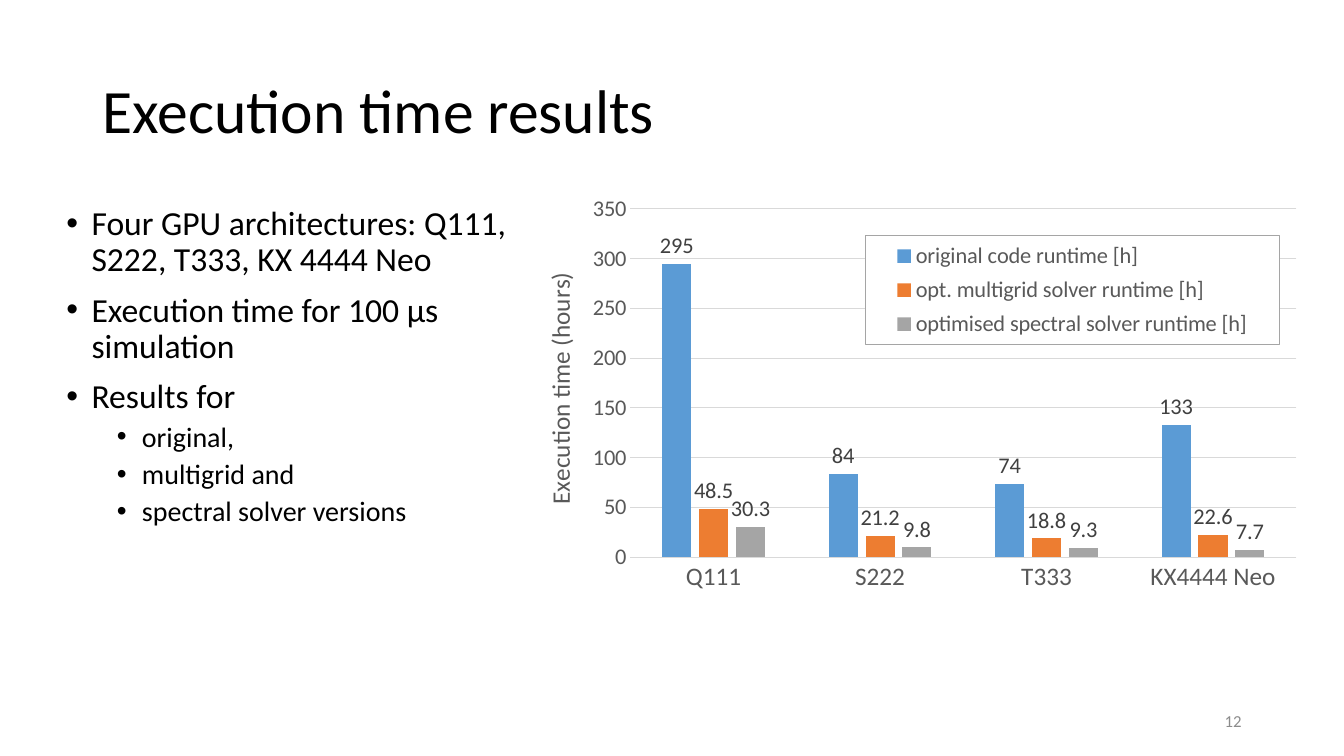
"""Build a slide that compares solver run times on four GPU types."""
from lxml import etree
from pptx import Presentation
from pptx.chart.data import CategoryChartData
from pptx.dml.color import RGBColor
from pptx.enum.chart import XL_CHART_TYPE, XL_LABEL_POSITION, XL_LEGEND_POSITION, XL_TICK_MARK
from pptx.enum.text import MSO_ANCHOR, PP_ALIGN
from pptx.oxml import parse_xml
from pptx.oxml.ns import nsdecls, qn
from pptx.util import Pt

COLUMN = XL_CHART_TYPE.COLUMN_CLUSTERED
ABOVE = XL_LABEL_POSITION.OUTSIDE_END
RIGHT_KEY = XL_LEGEND_POSITION.RIGHT
NO_TICK = XL_TICK_MARK.NONE
MIDDLE = MSO_ANCHOR.MIDDLE
LEFT, RIGHT = PP_ALIGN.LEFT, PP_ALIGN.RIGHT

TITLE = "Execution time results"
POINTS = [
    (0, "Four GPU architectures: Q111, S222, T333, KX 4444 Neo"),
    (0, "Execution time for 100 μs simulation"),
    (0, "Results for"),
    (1, "original,"),
    (1, "multigrid and"),
    (1, "spectral solver versions"),
]
NUMBER = "12"
CARDS = ["Q111", "S222", "T333", "KX4444 Neo"]
AXIS = "Execution time (hours)"
SERIES = [
    ("original code runtime [h]", [295, 84, 74, 133], "5B9BD5", "#,##0"),
    ("opt. multigrid solver runtime [h]", [48.5, 21.2, 18.8, 22.6], "ED7D31", "#,##0.0"),
    ("optimised spectral solver runtime [h]", [30.3, 9.8, 9.3, 7.7], "A5A5A5", "#,##0.0"),
]
THEME = {
    "font": "Calibri",
    "ink": "000000", "axis": "595959", "label": "404040", "grid": "D9D9D9",
    "edge": "A5A5A5", "page": "8C8C8C", "paper": "FFFFFF",
    "title": 44, "levels": [(24, 18, 10), (20, 54, 5)],
    "big": 18, "mid": 16, "small": 12,
}
BOXES = {
    "title": (66, 28.8, 828, 104.4),
    "points": (40.3, 144, 363.6, 342.7),
    "number": (678, 500.4, 216, 28.8),
    "chart": (373, 133.2, 572.4, 314.6),
}
PLOT = {"x": 0.135, "y": 0.051, "w": 0.831, "h": 0.791}
KEY = {"x": 0.428, "y": 0.112, "w": 0.517, "h": 0.247}
NAME = {"x": 0.02, "y": 0.185}


def box(key):
    return [Pt(v) for v in BOXES[key]]


def color(key):
    return RGBColor.from_string(THEME[key])


def style(font, size, ink):
    font.name = THEME["font"]
    font.size = Pt(size)
    font.bold = False
    font.color.rgb = color(ink)


def rule(line, ink):
    line.color.rgb = color(ink)
    line.width = Pt(0.75)


def place(node, spot, area, inner=False):
    for old in node.findall(qn("c:layout")):
        node.remove(old)
    layout = parse_xml(f"<c:layout {nsdecls('c')}><c:manualLayout/></c:layout>")
    marks = [("layoutTarget", "inner")] if inner else []
    marks += [(k + "Mode", "edge") for k in "xy"] + list(area.items())
    for tag, val in marks:
        etree.SubElement(layout[0], qn("c:" + tag)).set("val", str(val))
    node.insert(spot, layout)


def add_text(slide, key):
    frame = slide.shapes.add_textbox(*box(key)).text_frame
    frame.word_wrap = True
    return frame


def add_points(slide):
    frame = add_text(slide, "points")
    for i, (level, text) in enumerate(POINTS):
        para = frame.paragraphs[0] if i == 0 else frame.add_paragraph()
        size, indent, gap = THEME["levels"][level]
        para.text = text
        para.level = level
        props = para._p.get_or_add_pPr()
        props.set("marL", str(Pt(indent)))
        props.set("indent", str(Pt(-18)))
        etree.SubElement(props, qn("a:buFont")).set("typeface", "Arial")
        etree.SubElement(props, qn("a:buChar")).set("char", "•")
        para.line_spacing = 0.9
        para.space_before = Pt(gap if i else 0)
        style(para.font, size, "ink")


def add_key(chart):
    chart.has_legend = True
    key = chart.legend
    key.position = RIGHT_KEY
    key.include_in_layout = False
    style(key.font, THEME["mid"], "axis")
    node = key._element
    place(node, 1, KEY)
    frame = parse_xml(
        f"<c:spPr {nsdecls('c', 'a')}>"
        f"<a:solidFill><a:srgbClr val='{THEME['paper']}'/></a:solidFill>"
        f"<a:ln w='{Pt(0.75)}'><a:solidFill><a:srgbClr val='{THEME['edge']}'/>"
        "</a:solidFill></a:ln></c:spPr>")
    node.find(qn("c:overlay")).addnext(frame)


def set_axes(chart):
    cats, vals = chart.category_axis, chart.value_axis
    for axis, size in ((cats, THEME["big"]), (vals, THEME["mid"])):
        axis.major_tick_mark = axis.minor_tick_mark = NO_TICK
        style(axis.tick_labels.font, size, "axis")
    rule(cats.format.line, "grid")
    vals.format.line.fill.background()
    vals.minimum_scale, vals.maximum_scale, vals.major_unit = 0, 350, 50
    vals.tick_labels.number_format = "0"
    vals.tick_labels.number_format_is_linked = False
    vals.has_major_gridlines = True
    rule(vals.major_gridlines.format.line, "grid")
    frame = vals.axis_title.text_frame
    frame.text = AXIS
    style(frame.paragraphs[0].font, THEME["big"], "axis")
    turn = frame._txBody.find(qn("a:bodyPr"))
    turn.set("rot", "-5400000")
    turn.set("vert", "horz")
    place(vals.axis_title._element, 1, NAME)


def add_chart(slide):
    data = CategoryChartData()
    data.categories = CARDS
    for name, hours, _, form in SERIES:
        data.add_series(name, hours, form)
    chart = slide.shapes.add_chart(COLUMN, *box("chart"), data).chart
    chart.has_title = False
    style(chart.font, 14, "ink")
    plot = chart.plots[0]
    plot.gap_width, plot.overlap, plot.vary_by_categories = 219, -27, False
    for bars, (_, _, fill, form) in zip(plot.series, SERIES):
        bars.format.fill.solid()
        bars.format.fill.fore_color.rgb = RGBColor.from_string(fill)
        labels = bars.data_labels
        labels.show_value = True
        labels.position = ABOVE
        labels.number_format = form
        labels.number_format_is_linked = False
        style(labels.font, THEME["mid"], "label")
    set_axes(chart)
    add_key(chart)
    place(chart._chartSpace.chart.plotArea, 0, PLOT, True)


def main():
    deck = Presentation()
    deck.slide_width, deck.slide_height = Pt(960), Pt(540)
    slide = deck.slides.add_slide(deck.slide_layouts[5])
    title = slide.shapes.title
    title.left, title.top, title.width, title.height = box("title")
    title.text_frame.text = TITLE
    title.text_frame.vertical_anchor = MIDDLE
    head = title.text_frame.paragraphs[0]
    head.alignment, head.line_spacing = LEFT, 0.9
    style(head.font, THEME["title"], "ink")
    add_points(slide)
    foot = add_text(slide, "number")
    foot.text = NUMBER
    foot.vertical_anchor = MIDDLE
    foot.paragraphs[0].alignment = RIGHT
    style(foot.paragraphs[0].font, THEME["small"], "page")
    add_chart(slide)
    deck.save("out.pptx")


if __name__ == "__main__":
    main()
